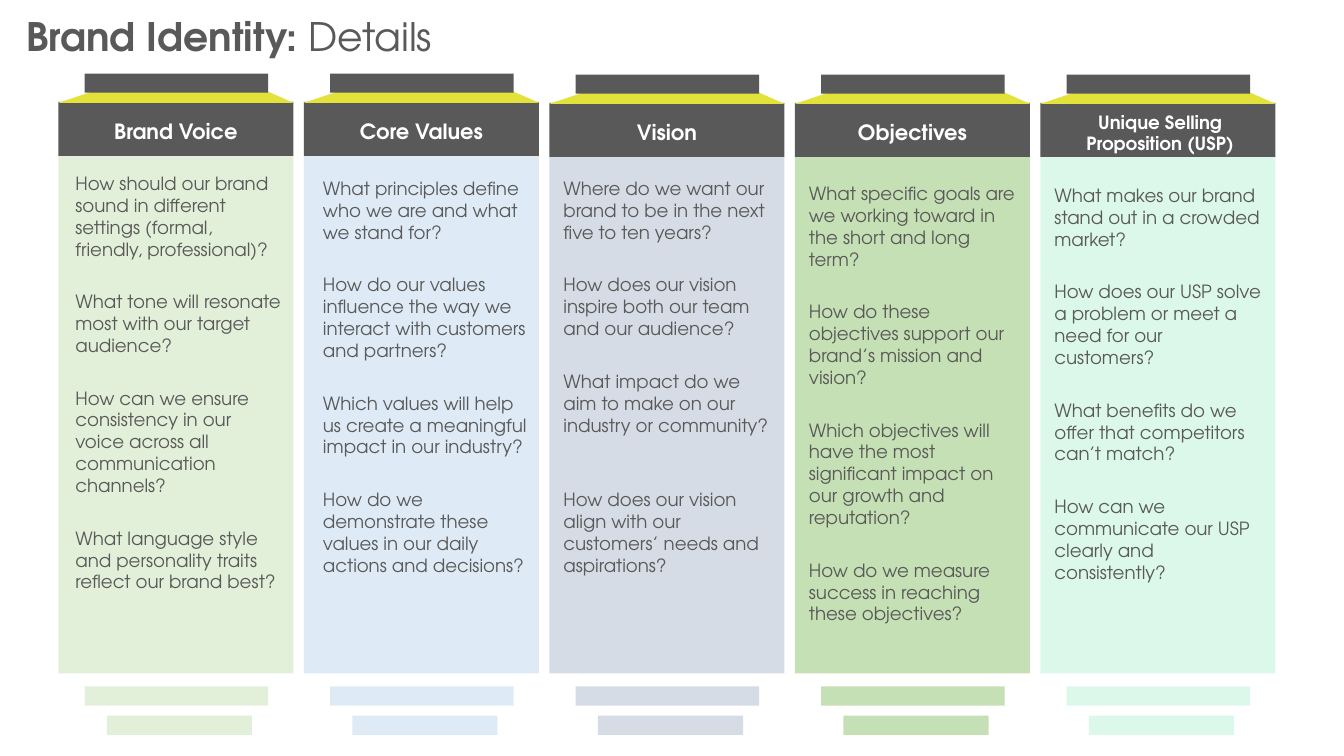
from pptx import Presentation
from pptx.dml.color import RGBColor
from pptx.enum.shapes import MSO_SHAPE
from pptx.enum.text import MSO_ANCHOR, MSO_AUTO_SIZE, PP_ALIGN
from pptx.util import Inches, Pt

FONT = "TeX Gyre Adventor"
GRAY, YELLOW, WHITE = "595959", "E2E23A", "FFFFFF"
LEFT, PITCH, WIDTH = 0.58, (10.32 - 0.58) / 4, 2.33

# heading, heading size, heading dx and top, carton top,
# colour, questions dx and top, questions
COLUMNS = [
    ("Brand Voice", 15, 0, 1.13, 1.01, "E2F0D9", 0.07, 1.66, [
        "How should our brand sound in different settings (formal, friendly, professional)?",
        "What tone will resonate most with our target audience?",
        "How can we ensure consistency in our voice across all communication channels?",
        "What language style and personality traits reflect our brand best?"]),
    ("Core Values", 15, 0, 1.13, 1.01, "DEEBF7", 0.09, 1.71, [
        "What principles define who we are and what we stand for?",
        "How do our values influence the way we interact with customers and partners?",
        "Which values will help us create a meaningful impact in our industry?",
        "How do we demonstrate these values in our daily actions and decisions?"]),
    ("Vision", 15, 0, 1.14, 1.02, "D6DCE5", 0.04, 1.71, [
        "Where do we want our brand to be in the next five to ten years?",
        "How does our vision inspire both our team and our audience?",
        "What impact do we aim to make on our industry or community?",
        "How does our vision align with our customers’ needs and aspirations?"]),
    ("Objectives", 15, 0, 1.14, 1.02, "C5E0B4", 0.04, 1.76, [
        "What specific goals are we working toward in the short and long term?",
        "How do these objectives support our brand’s mission and vision?",
        "Which objectives will have the most significant impact on our growth and reputation?",
        "How do we measure success in reaching these objectives?"]),
    ("Unique Selling Proposition (USP)", 13, 0.02, 1.05, 1.02, "DCF8EB", 0.04, 1.78, [
        "What makes our brand stand out in a crowded market?",
        "How does our USP solve a problem or meet a need for our customers?",
        "What benefits do we offer that competitors can’t match?",
        "How can we communicate our USP clearly and consistently?"]),
]


def rgb(color):
    return RGBColor.from_string(color)


def paint(sp, color):
    sp.shadow.inherit = False
    sp.fill.solid()
    sp.fill.fore_color.rgb = rgb(color)
    sp.line.fill.background()


def format_run(r, size, color, bold=False):
    r.font.name = FONT
    r.font.size = Pt(size)
    r.font.bold = bold
    r.font.color.rgb = rgb(color)


def add_bar(s, x, y, w, h, color):
    sp = s.shapes.add_shape(MSO_SHAPE.RECTANGLE, Inches(x), Inches(y), Inches(w), Inches(h))
    paint(sp, color)


def add_shoulder(s, x, y):
    """Draw the sloping carton top between the lid and the heading."""
    corners = [(0.6, 0), (1.9, 0.01), (WIDTH, 0.2), (0, 0.2)]
    points = [(Inches(x + dx), Inches(y + dy)) for dx, dy in corners]
    builder = s.shapes.build_freeform(*points[0])
    builder.add_line_segments(points[1:], close=True)
    paint(builder.convert_to_shape(), YELLOW)


def add_text(s, x, y, w, h, lines, size, color, bold=False, align=PP_ALIGN.LEFT, after=0):
    tf = s.shapes.add_textbox(Inches(x), Inches(y), Inches(w), Inches(h)).text_frame
    tf.word_wrap = True
    tf.text = "\n".join(lines)
    for p in tf.paragraphs:
        p.alignment = align
        p.space_after = Pt(after)
        format_run(p.runs[0], size, color, bold)
    return tf


def add_title(s):
    sp = s.shapes.title
    sp.left, sp.top, sp.width, sp.height = map(Inches, (0.16, 0.07, 12.95, 0.57))
    tf = sp.text_frame
    tf.auto_size = MSO_AUTO_SIZE.NONE
    tf.vertical_anchor = MSO_ANCHOR.TOP
    p = tf.paragraphs[0]
    p.alignment = PP_ALIGN.LEFT
    for text, bold in (("Brand Identity: ", True), ("Details", False)):
        r = p.add_run()
        r.text = text
        format_run(r, 28, GRAY, bold)


def add_column(s, x, heading, size, head_dx, head_y, top, color, text_dx, text_y, questions):
    # Carton top and heading
    add_bar(s, x, top, WIDTH, 0.54, GRAY)
    add_shoulder(s, x, top - 0.19)
    add_bar(s, x + 0.26, top - 0.28, 1.82, 0.19, GRAY)
    add_text(s, x + head_dx, head_y, WIDTH, 0.35, [heading], size, WHITE, True, PP_ALIGN.CENTER)

    # Panel and the two bars under it
    add_bar(s, x, 1.56, WIDTH, 5.12, color)
    add_bar(s, x + 0.26, 6.81, 1.82, 0.19, color)
    add_bar(s, x + 0.48, 7.1, 1.44, 0.19, color)

    # Questions
    tf = add_text(s, x + text_dx, text_y, 2.26, 4.3, questions, 13, GRAY, after=22)
    if heading == "Vision":
        tf.paragraphs[-1].space_before = Pt(15.6)


def main():
    prs = Presentation()
    prs.slide_width, prs.slide_height = Inches(13.33), Inches(7.5)
    s = prs.slides.add_slide(prs.slide_layouts[5])
    add_title(s)
    for i, column in enumerate(COLUMNS):
        add_column(s, LEFT + i * PITCH, *column)
    prs.save("out.pptx")


if __name__ == "__main__":
    main()
